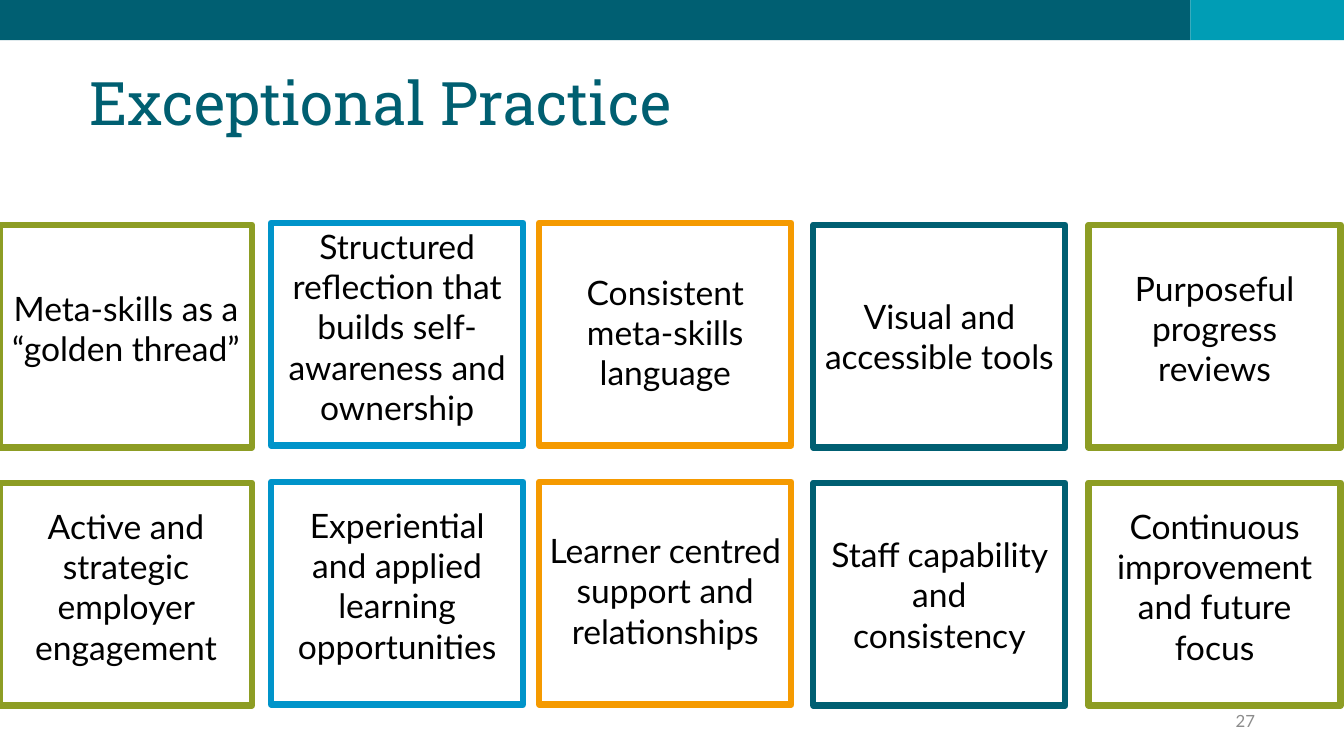
from dataclasses import dataclass

from pptx import Presentation
from pptx.dml.color import RGBColor
from pptx.enum.shapes import MSO_SHAPE
from pptx.enum.text import MSO_ANCHOR as ANCHOR, MSO_AUTO_SIZE as FIT, PP_ALIGN as ALIGN
from pptx.util import Pt


@dataclass(frozen=True)
class Theme:
    """Colours, fonts and type sizes of the slide."""
    teal: str = "005F72"
    cyan: str = "009DB5"
    olive: str = "8D9D24"
    blue: str = "0094CA"
    orange: str = "F59A00"
    title: str = "005F71"
    ink: str = "000000"
    grey: str = "8C8C8C"
    body_font: str = "Lato"
    title_font: str = "Roboto Slab"
    title_size: float = 42.9
    card_size: float = 24
    number_size: float = 12
    border: float = 4.5


THEME = Theme()
CARD_W, CARD_H = 180, 159.1
LINE_H, PADDING = 29, 7.4

COLUMNS = [
    (0, THEME.olive, (160.6, 344.9)),
    (193.7, THEME.blue, (159.1, 344.2)),
    (385.2, THEME.orange, (159.1, 344.2)),
    (581, THEME.teal, (160.6, 344.9)),
    (777.6, THEME.olive, (160.6, 344.9)),
]

ROWS = [
    [
        ("Meta-skills as a “golden thread”", 187.2, 3),
        ("Structured reflection that builds self-awareness and ownership", 157, 5),
        ("Consistent meta-skills language", 190.1, 3),
        ("Visual and accessible tools", 207.4, 2),
        ("Purposeful progress reviews", 187.2, 3),
    ],
    [
        ("Active and strategic employer engagement", 357.1, 4),
        ("Experiential and applied learning opportunities", 356.4, 4),
        ("Learner centred support and relationships", 360, 4),
        ("Staff capability and consistency", 377.3, 3),
        ("Continuous improvement and future focus", 357.1, 4),
    ],
]


def set_attrs(obj, values):
    """Set each named attribute of an object."""
    for name, value in values.items():
        setattr(obj, name, value)


def add_rect(shapes, box, fill=None, line=None):
    """Add a rectangle with a plain fill or a coloured border."""
    sp = shapes.add_shape(MSO_SHAPE.RECTANGLE, *map(Pt, box))
    sp.shadow.inherit = False
    if fill:
        sp.fill.solid()
        sp.fill.fore_color.rgb = RGBColor.from_string(fill)
    else:
        sp.fill.background()
    if line:
        sp.line.color.rgb = RGBColor.from_string(line)
        sp.line.width = Pt(THEME.border)
    else:
        sp.line.fill.background()


def add_text(shapes, box, text, size, color, font=THEME.body_font, frame=None, para=None):
    """Add a wrapped text box with one formatted paragraph."""
    tf = shapes.add_textbox(*map(Pt, box)).text_frame
    set_attrs(tf, {"word_wrap": True, **(frame or {})})
    p = tf.paragraphs[0]
    set_attrs(p, para or {})
    r = p.add_run()
    r.text = text
    set_attrs(r.font, {"name": font, "size": Pt(size)})
    r.font.color.rgb = RGBColor.from_string(color)


def add_card(s, left, top, color, text, text_top, lines):
    """Add a grouped card: a bordered square with centred text."""
    shapes = s.shapes.add_group_shape().shapes
    add_rect(shapes, (left, top, CARD_W, CARD_H), line=color)
    add_text(shapes, (left, text_top, CARD_W, LINE_H * lines + PADDING), text,
             THEME.card_size, THEME.ink,
             frame={"vertical_anchor": ANCHOR.MIDDLE, "auto_size": FIT.SHAPE_TO_FIT_TEXT},
             para={"alignment": ALIGN.CENTER})


def main():
    """Build the slide and save it."""
    prs = Presentation()
    set_attrs(prs, {"slide_width": Pt(960), "slide_height": Pt(540)})
    s = prs.slides.add_slide(prs.slide_layouts[6])
    add_rect(s.shapes, (0, 0, 850.3, 28.8), fill=THEME.teal)
    add_rect(s.shapes, (850.3, 0, 109.7, 28.8), fill=THEME.cyan)
    add_text(s.shapes, (687.6, 500.4, 216, 28.8), "27", THEME.number_size, THEME.grey,
             frame={"vertical_anchor": ANCHOR.MIDDLE}, para={"alignment": ALIGN.RIGHT})
    add_text(s.shapes, (56.9, 53.3, 846.7, 53.3), "Exceptional Practice",
             THEME.title_size, THEME.title, THEME.title_font, para={"line_spacing": 0.8})
    for row, cards in enumerate(ROWS):
        for (left, color, tops), card in zip(COLUMNS, cards):
            add_card(s, left, tops[row], color, *card)
    prs.save("out.pptx")


if __name__ == "__main__":
    main()
